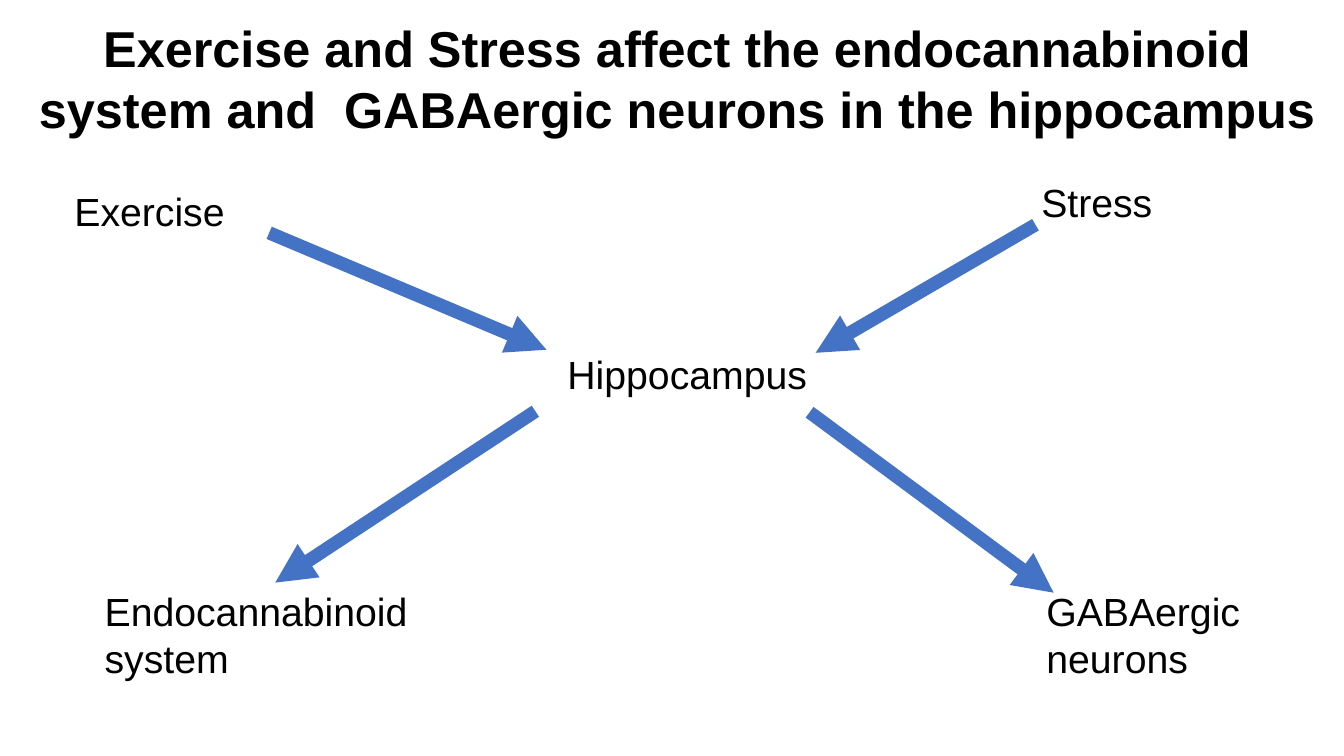
from lxml import etree
from pptx import Presentation
from pptx.dml.color import RGBColor
from pptx.enum.shapes import MSO_CONNECTOR
from pptx.enum.text import MSO_ANCHOR, MSO_AUTO_SIZE, PP_ALIGN
from pptx.oxml.ns import qn
from pptx.util import Inches, Pt

STRAIGHT = MSO_CONNECTOR.STRAIGHT
TOP, MIDDLE = MSO_ANCHOR.TOP, MSO_ANCHOR.MIDDLE
LEFT, CENTER = PP_ALIGN.LEFT, PP_ALIGN.CENTER
NO_FIT = MSO_AUTO_SIZE.NONE
TITLE_ONLY = 5

HEADING = (
    "Exercise and Stress affect the endocannabinoid "
    "system and  GABAergic neurons in the hippocampus"
)
LABELS = [
    ("Exercise", (0.64, 1.81, 3.43, 0.57), TOP),
    ("Stress", (10.23, 1.72, 2.86, 0.57), TOP),
    ("Hippocampus", (5.53, 2.98, 2.64, 1.45), MIDDLE),
    ("Endocannabinoid system", (0.94, 5.78, 3.43, 1.04), TOP),
    ("GABAergic neurons", (10.28, 5.78, 2.86, 1.04), TOP),
]
ARROWS = [
    ((2.67, 2.31), (5.42, 3.47)),
    ((10.27, 2.23), (8.09, 3.5)),
    ((5.31, 4.08), (2.73, 5.78)),
    ((8.03, 4.09), (10.45, 5.88)),
]


def color(value):
    return RGBColor.from_string(value)


def write_text(box, text, size=28, bold=False, align=LEFT, anchor=TOP, ink="000000"):
    frame = box.text_frame
    frame.word_wrap = True
    frame.auto_size = NO_FIT
    frame.vertical_anchor = anchor
    para = frame.paragraphs[0]
    para.alignment = align
    para.line_spacing = 1.0
    span = para.add_run()
    span.text = text
    span.font.name = "Arial"
    span.font.size = Pt(size)
    span.font.bold = bold
    span.font.color.rgb = color(ink)


class DiagramPage:
    arrow_color = "4472C4"
    arrow_width = 9.5

    def __init__(self, deck):
        self.page = deck.slides.add_slide(deck.slide_layouts[TITLE_ONLY])

    def title(self, text, bounds):
        box = self.page.shapes.title
        box.left, box.top, box.width, box.height = map(Inches, bounds)
        write_text(box, text, size=36, bold=True, align=CENTER)

    def label(self, text, bounds, anchor):
        box = self.page.shapes.add_textbox(*map(Inches, bounds))
        write_text(box, text, anchor=anchor)

    def arrow(self, start, end):
        connector = self.page.shapes.add_connector(STRAIGHT, *map(Inches, start + end))
        connector.line.color.rgb = color(self.arrow_color)
        connector.line.width = Pt(self.arrow_width)
        outline = connector.line._get_or_add_ln()
        etree.SubElement(outline, qn("a:tailEnd"), type="triangle")
        etree.SubElement(connector._element.spPr, qn("a:effectLst"))


def main():
    deck = Presentation()
    deck.slide_width = Inches(13.33)
    deck.slide_height = Inches(7.5)
    diagram = DiagramPage(deck)
    diagram.title(HEADING, (0.11, 0.12, 13.22, 1.31))
    for text, bounds, anchor in LABELS:
        diagram.label(text, bounds, anchor)
    for start, end in ARROWS:
        diagram.arrow(start, end)
    deck.save("out.pptx")


if __name__ == "__main__":
    main()
